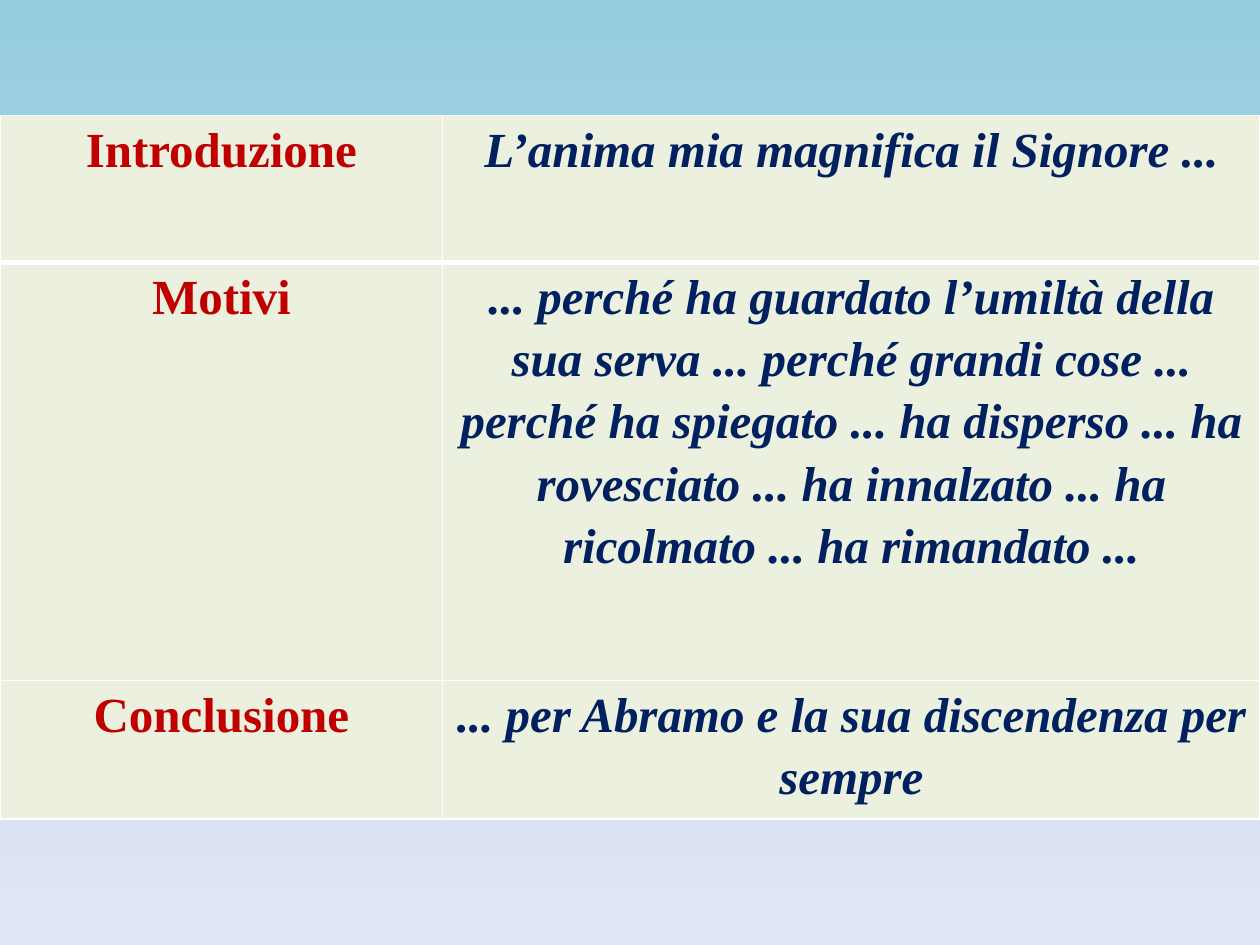
from copy import deepcopy

from lxml import etree
from pptx import Presentation
from pptx.dml.color import RGBColor
from pptx.enum.text import PP_ALIGN
from pptx.oxml.ns import qn
from pptx.util import Pt

CENTER = PP_ALIGN.CENTER
BLANK_LAYOUT = 6

COLORS = {
    "sky": "93CDDD",
    "haze": "C2D1ED",
    "mist": "E1E8F5",
    "cell": "EBF1DE",
    "border": "FFFFFF",
    "heading": "C00000",
    "quote": "002060",
}
COLUMN_WIDTHS = [253, 467]
ROW_HEIGHTS = [84, 239, 79]
TABLE_TOP = 66
ROWS = [
    ("Introduzione", "L’anima mia magnifica il Signore ..."),
    ("Motivi", "... perché ha guardato l’umiltà della sua serva ... "
               "perché grandi cose ... perché ha spiegato ... ha disperso ... "
               "ha rovesciato ... ha innalzato ... ha ricolmato ... "
               "ha rimandato ..."),
    ("Conclusione", "... per Abramo e la sua discendenza per sempre"),
]


class SlideBuilder:
    """Holds the text style and the current slide."""

    font = {"name": "Times New Roman", "size": Pt(28), "bold": True}
    margins = {"margin_left": Pt(5), "margin_right": Pt(5),
               "margin_top": 0, "margin_bottom": 0}
    paragraph = {"alignment": CENTER, "line_spacing": 1.15}

    def __init__(self, slide):
        self.slide = slide

    @staticmethod
    def apply(target, values):
        for name, value in values.items():
            setattr(target, name, value)

    def background(self, color_names):
        fill = self.slide.background.fill
        fill.gradient()
        fill.gradient_angle = 270  # counter-clockwise: top to bottom
        stop_list = self.slide.element.find(".//" + qn("a:gsLst"))
        while len(stop_list) < len(color_names):
            stop_list.append(deepcopy(stop_list[0]))
        for index, (stop, name) in enumerate(zip(fill.gradient_stops, color_names)):
            stop.position = index / (len(color_names) - 1)
            stop.color.rgb = RGBColor.from_string(COLORS[name])

    def border(self, cell, side, width):
        properties = cell._tc.get_or_add_tcPr()
        line = etree.SubElement(properties, qn(f"a:ln{side}"), w=str(Pt(width)))
        solid = etree.SubElement(line, qn("a:solidFill"))
        etree.SubElement(solid, qn("a:srgbClr"), val=COLORS["border"])

    def cell(self, cell, text, color, italic, top, bottom):
        self.apply(cell, self.margins)
        for side, width in {"L": 1, "R": 1, "T": top, "B": bottom}.items():
            self.border(cell, side, width)
        cell.fill.solid()
        cell.fill.fore_color.rgb = RGBColor.from_string(COLORS["cell"])
        para = cell.text_frame.paragraphs[0]
        self.apply(para, self.paragraph)
        span = para.add_run()
        span.text = text
        self.apply(span.font, self.font | {"italic": italic})
        span.font.color.rgb = RGBColor.from_string(COLORS[color])

    def table(self, rows, widths, heights, top):
        frame = self.slide.shapes.add_table(
            len(rows), len(widths), 0, Pt(top), Pt(sum(widths)), Pt(sum(heights)))
        table = frame.table
        for column, width in zip(table.columns, widths):
            column.width = Pt(width)
        for index, (row, height) in enumerate(zip(table.rows, heights)):
            row.height = Pt(height)
            # A thick rule separates the first row from the rest
            edges = {"top": 3 if index == 1 else 1, "bottom": 3 if index == 0 else 1}
            heading, quote = rows[index]
            self.cell(table.cell(index, 0), heading, "heading", False, **edges)
            self.cell(table.cell(index, 1), quote, "quote", True, **edges)


def main():
    deck = Presentation()
    deck.slide_width, deck.slide_height = Pt(720), Pt(540)
    builder = SlideBuilder(deck.slides.add_slide(deck.slide_layouts[BLANK_LAYOUT]))

    # Sky gradient behind the table
    builder.background(["sky", "haze", "mist"])
    # Structure of the canticle
    builder.table(ROWS, COLUMN_WIDTHS, ROW_HEIGHTS, TABLE_TOP)

    deck.save("out.pptx")


if __name__ == "__main__":
    main()
